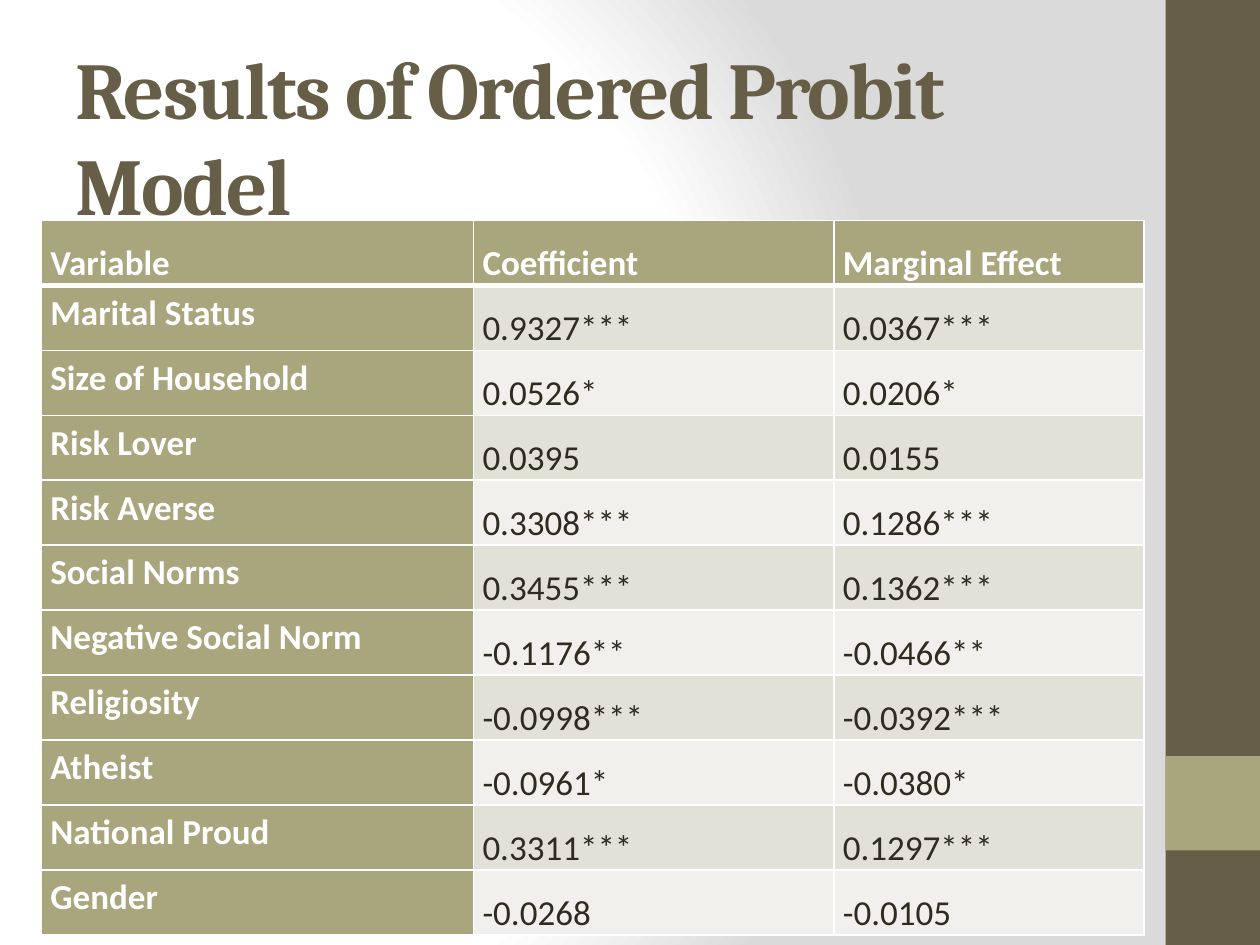
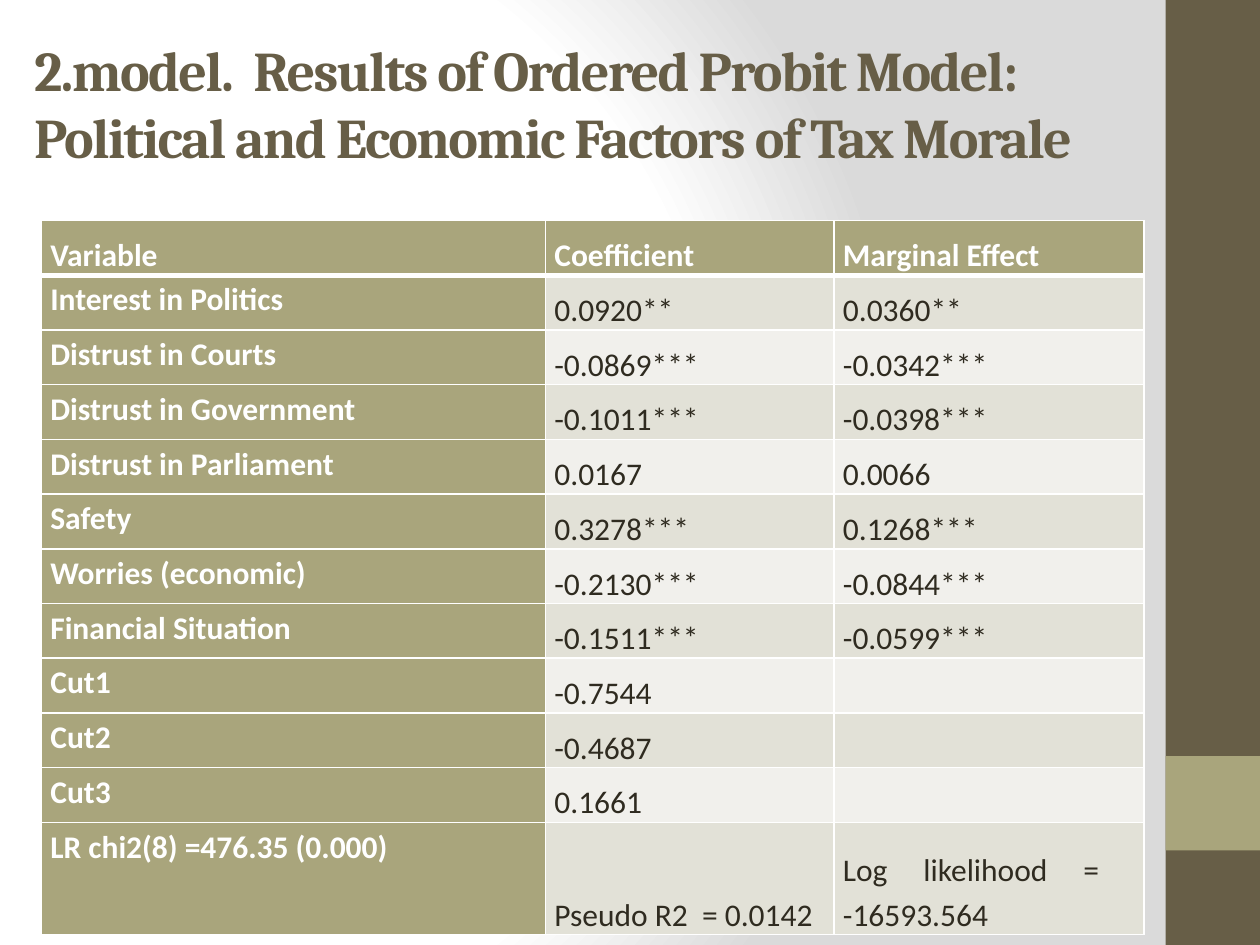
from pptx import Presentation
from pptx.dml.color import RGBColor
from pptx.enum.shapes import MSO_SHAPE
from pptx.enum.text import MSO_ANCHOR, MSO_AUTO_SIZE, PP_ALIGN
from pptx.oxml import parse_xml
from pptx.oxml.ns import nsdecls, qn
from pptx.util import Pt

RECTANGLE = MSO_SHAPE.RECTANGLE
TOP, MIDDLE, BOTTOM = MSO_ANCHOR.TOP, MSO_ANCHOR.MIDDLE, MSO_ANCHOR.BOTTOM
LEFT, JUSTIFY = PP_ALIGN.LEFT, PP_ALIGN.JUSTIFY
NO_AUTOFIT = MSO_AUTO_SIZE.NONE

# Shared look
EMU_PER_PX = 9144  # 100 px to the inch
WIDTH, HEIGHT = 1000, 750
BROWN, OLIVE, INK, WHITE, GRAY = "675E47", "A9A57C", "2F2B20", "FFFFFF", "DADADA"
BANDS = ("E2E1D7", "F1F0EC")
TITLE_FONT, TABLE_FONT = "Cambria", "Calibri"
TABLE_BOX = (33, 175, 875, 567)
TITLE_ONLY = 5

HEADINGS = ("Variable", "Coefficient", "Marginal Effect")
SOCIAL_ROWS = [
    HEADINGS,
    ("Marital Status ", "0.9327***", "0.0367***"),
    ("Size of Household ", "0.0526*", "0.0206*"),
    ("Risk Lover", "0.0395", "0.0155"),
    ("Risk Averse", "0.3308***", "0.1286***"),
    ("Social Norms", "0.3455***", "0.1362***"),
    ("Negative Social Norm", "-0.1176**", "-0.0466**"),
    ("Religiosity", "-0.0998***", "-0.0392***"),
    ("Atheist", "-0.0961*", "-0.0380*"),
    ("National Proud", "0.3311***", "0.1297***"),
    ("Gender", "-0.0268", "-0.0105"),
]
POLITICAL_ROWS = [
    HEADINGS,
    ("Interest in Politics", "0.0920**", "0.0360**"),
    ("Distrust in Courts", "-0.0869***", "-0.0342***"),
    ("Distrust in Government", "-0.1011***", "-0.0398***"),
    ("Distrust in Parliament", "0.0167", "0.0066"),
    ("Safety", "0.3278***", "0.1268***"),
    ("Worries (economic)", "-0.2130***", "-0.0844***"),
    ("Financial Situation", "-0.1511***", "-0.0599***"),
    ("Cut1", "-0.7544", ""),
    ("Cut2", "-0.4687", ""),
    ("Cut3", "0.1661", ""),
    ("LR chi2(8) =476.35 (0.000)", "Pseudo R2  = 0.0142",
     "Log likelihood =  -16593.564"),
]


def px(length):
    return round(length * EMU_PER_PX)


def color(hex_string):
    return RGBColor.from_string(hex_string)


def style_runs(para, font, size, hex_string, bold):
    for span in para.runs:
        span.font.name = font
        span.font.size = Pt(size)
        span.font.bold = bold
        span.font.color.rgb = color(hex_string)


def set_background(master):
    """Radial gradient shared by every page."""
    stops = "".join(
        f'<a:gs pos="{position * 1000}"><a:srgbClr val="{shade}"/></a:gs>'
        for position, shade in ((0, WHITE), (75, WHITE), (100, GRAY)))
    background = master.element.cSld.find(qn("p:bg"))
    for child in list(background):
        background.remove(child)
    background.append(parse_xml(
        f'<p:bgPr {nsdecls("p", "a")}><a:gradFill rotWithShape="1">'
        f'<a:gsLst>{stops}</a:gsLst><a:path path="circle">'
        '<a:fillToRect l="20000" t="50000" r="100000" b="50000"/></a:path>'
        '</a:gradFill><a:effectLst/></p:bgPr>'))


def add_band(page, left, top, width, height, fill):
    band = page.shapes.add_shape(
        RECTANGLE, px(left), px(top), px(width), px(height))
    band.shadow.inherit = False
    band.fill.solid()
    band.fill.fore_color.rgb = color(fill)
    band.line.fill.background()


def set_title(page, text, box, size):
    title = page.shapes.title
    title.left, title.top, title.width, title.height = map(px, box)
    frame = title.text_frame
    frame.text = text
    frame.word_wrap = True
    frame.auto_size = NO_AUTOFIT
    frame.vertical_anchor = MIDDLE
    para = frame.paragraphs[0]
    para.alignment = LEFT
    style_runs(para, TITLE_FONT, size, BROWN, True)
    for span in para.runs:
        span.font._element.set("spc", "-100")


def add_page(deck, title, title_box, title_size):
    page = deck.slides.add_slide(deck.slide_layouts[TITLE_ONLY])
    add_band(page, 925, 0, 75, HEIGHT, BROWN)
    add_band(page, 925, 600, 75, 75, OLIVE)
    set_title(page, title, title_box, title_size)
    return page


def set_borders(cell, top, bottom):
    properties = cell._tc.get_or_add_tcPr()
    for side, points in (("L", 1), ("R", 1), ("T", top), ("B", bottom)):
        properties.append(parse_xml(
            f'<a:ln{side} {nsdecls("a")} w="{Pt(points)}"><a:solidFill>'
            f'<a:srgbClr val="{WHITE}"/></a:solidFill></a:ln{side}>'))


def format_cell(cell, text, row, column, size):
    is_heading = row == 0
    is_label = is_heading or column == 0
    set_borders(cell, 3 if row == 1 else 1, 3 if is_heading else 1)
    cell.fill.solid()
    cell.fill.fore_color.rgb = color(OLIVE if is_label else BANDS[(row - 1) % 2])
    cell.margin_left = cell.margin_right = px(7)
    cell.margin_top = cell.margin_bottom = 0
    cell.vertical_anchor = TOP if column == 0 and not is_heading else BOTTOM
    cell.text = text
    para = cell.text_frame.paragraphs[0]
    para.alignment = JUSTIFY
    para.line_spacing = 1.15
    style_runs(para, TABLE_FONT, size, WHITE if is_label else INK, is_label)


def add_results_table(page, rows, column_widths, row_heights, size):
    table = page.shapes.add_table(
        len(rows), len(HEADINGS), *map(px, TABLE_BOX)).table
    for column, width in zip(table.columns, column_widths):
        column.width = px(width)
    for table_row, height in zip(table.rows, row_heights):
        table_row.height = px(height)
    for row, texts in enumerate(rows):
        for column, text in enumerate(texts):
            format_cell(table.cell(row, column), text, row, column, size)


def main():
    deck = Presentation()
    deck.slide_width, deck.slide_height = px(WIDTH), px(HEIGHT)
    set_background(deck.slide_master)
    table_height = TABLE_BOX[3]

    # Social factors: equal rows
    page = add_page(deck, "Results of Ordered Probit Model",
                    (50, 30, 833, 155), 46)
    count = len(SOCIAL_ROWS)
    add_results_table(page, SOCIAL_ROWS, (343, 286, 246),
                      [table_height / count] * count, 20)

    # Political and economic factors: a taller last row for the fit statistics
    page = add_page(deck, "2.model.  Results of Ordered Probit Model: "
                    "Political and Economic Factors of Tax Morale",
                    (17, 8, 892, 147), 32)
    count = len(POLITICAL_ROWS) - 1
    last_height = 89
    heights = [(table_height - last_height) / count] * count + [last_height]
    add_results_table(page, POLITICAL_ROWS, (400, 229, 246), heights, 18)

    deck.save("out.pptx")


if __name__ == "__main__":
    main()
